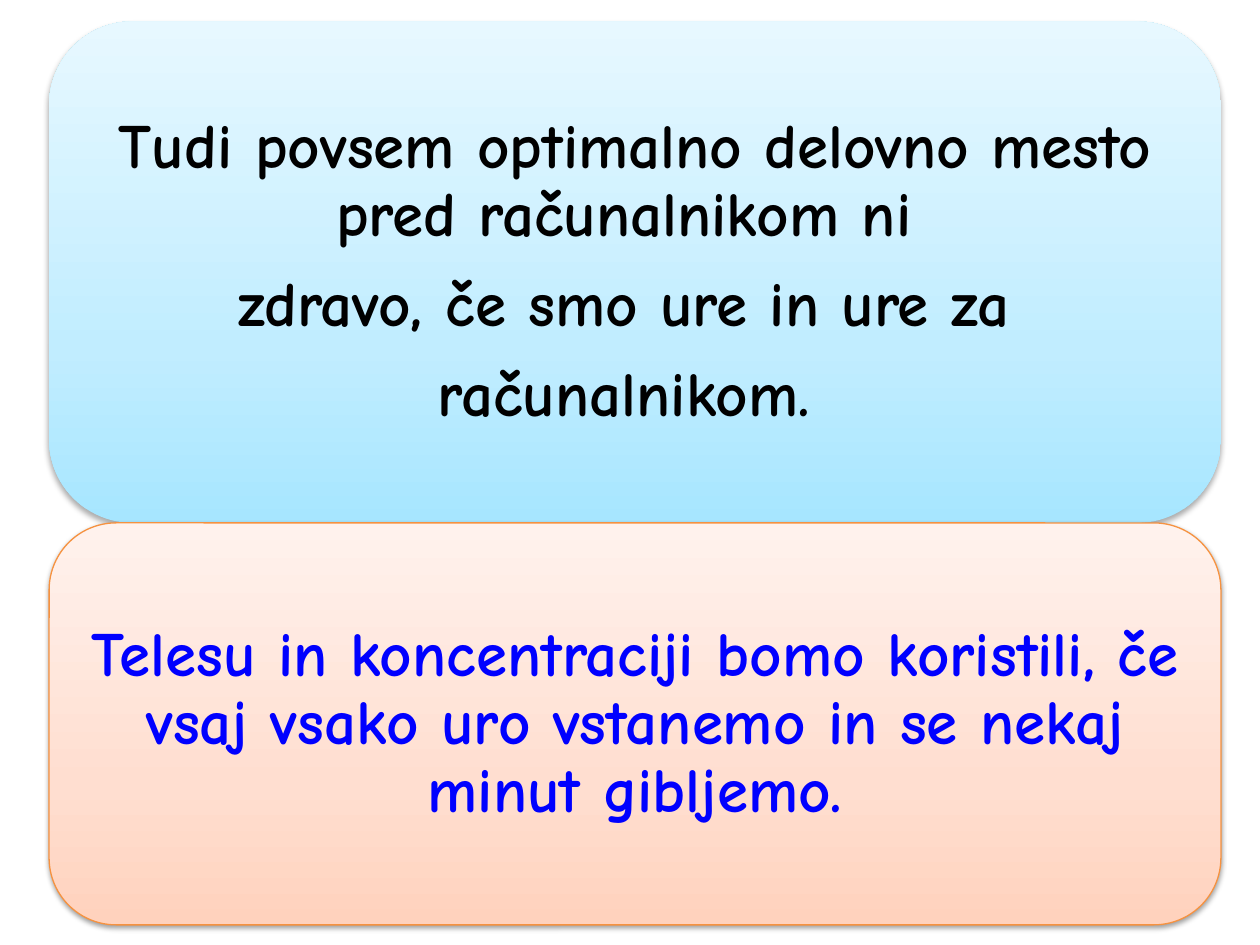
"""Build a slide with two stacked gradient panels about working at a computer."""
from lxml import etree
from pptx import Presentation
from pptx.dml.color import RGBColor
from pptx.enum import shapes, text
from pptx.oxml.ns import qn
from pptx.util import Inches, Pt

FONT = "Comic Neue"
LEFT, TOP, WIDTH = 0.39, 0.17, 9.3
PANELS = [
    {"height": 3.98, "inset": 0.19, "color": "000000", "line": None,
     "stops": [(0, "A7E6FF"), (35, "C1EDFF"), (100, "E7F8FF")],
     "shadow": {"alpha": 32, "blur": 3.5, "dist": 2.2},
     "lines": ["Tudi povsem optimalno delovno mesto pred računalnikom ni ",
               "zdravo, če smo ure in ure za ",
               "računalnikom. "]},
    {"height": 3.19, "inset": 0.16, "color": "0000FF", "line": "F69240",
     "stops": [(0, "FFD2BD"), (35, "FFDED0"), (100, "FFF2ED")],
     "shadow": {"alpha": 38, "blur": 3.1, "dist": 1.6},
     "lines": ["Telesu in koncentraciji bomo koristili, če vsaj vsako uro "
               "vstanemo in se nekaj minut gibljemo."]},
]


def rgb(value):
    return RGBColor.from_string(value)


def add_node(parent, tag, **attrs):
    return etree.SubElement(parent, qn(tag), {k: str(v) for k, v in attrs.items()})


def set_gradient(sp, stops):
    sp.fill.gradient()
    sp.fill.gradient_angle = 90
    gs_list = sp._element.spPr.find(".//" + qn("a:gsLst"))
    for old in list(gs_list):
        gs_list.remove(old)
    for pos, color in stops:
        gs = add_node(gs_list, "a:gs", pos=pos * 1000)
        add_node(gs, "a:srgbClr", val=color)


def set_shadow(sp, alpha, blur, dist):
    sp.shadow.inherit = False
    effects = sp._element.spPr.find(qn("a:effectLst"))
    outer = add_node(effects, "a:outerShdw", blurRad=Pt(blur), dist=Pt(dist),
                     dir=90 * 60000, rotWithShape=0)
    add_node(add_node(outer, "a:srgbClr", val="000000"), "a:alpha", val=alpha * 1000)


def add_panel(s, top, height, stops, line, shadow):
    sp = s.shapes.add_shape(shapes.MSO_SHAPE.ROUNDED_RECTANGLE, Inches(LEFT),
                            Inches(top), Inches(WIDTH), Inches(height))
    set_gradient(sp, stops)
    if line:
        sp.line.color.rgb = rgb(line)
        sp.line.width = Pt(0.75)
    else:
        sp.line.fill.background()
    set_shadow(sp, **shadow)


def add_text(s, lines, left, top, width, height, color, size=36, bold=True):
    box = s.shapes.add_textbox(*map(Inches, (left, top, width, height)))
    tf = box.text_frame
    tf.word_wrap = True
    tf.vertical_anchor = text.MSO_ANCHOR.MIDDLE
    tf.margin_left = tf.margin_right = tf.margin_top = tf.margin_bottom = Inches(0.15)
    for i, words in enumerate(lines):
        p = tf.add_paragraph() if i else tf.paragraphs[0]
        p.alignment = text.PP_ALIGN.CENTER
        p.line_spacing = 0.9
        p.space_after = Pt(size * 0.35)
        r = p.add_run()
        r.text = words
        r.font.name = FONT
        r.font.size = Pt(size)
        r.font.bold = bold
        r.font.color.rgb = rgb(color)


def main():
    prs = Presentation()
    prs.slide_width, prs.slide_height = Inches(10), Inches(7.5)
    s = prs.slides.add_slide(prs.slide_layouts[6])
    top = TOP
    for panel in PANELS:
        height, inset = panel["height"], panel["inset"]
        add_panel(s, top, height, panel["stops"], panel["line"], panel["shadow"])
        add_text(s, panel["lines"], LEFT + inset, top + inset, WIDTH - 2 * inset,
                 height - 2 * inset, panel["color"])
        top += height
    prs.save("out.pptx")


if __name__ == "__main__":
    main()
